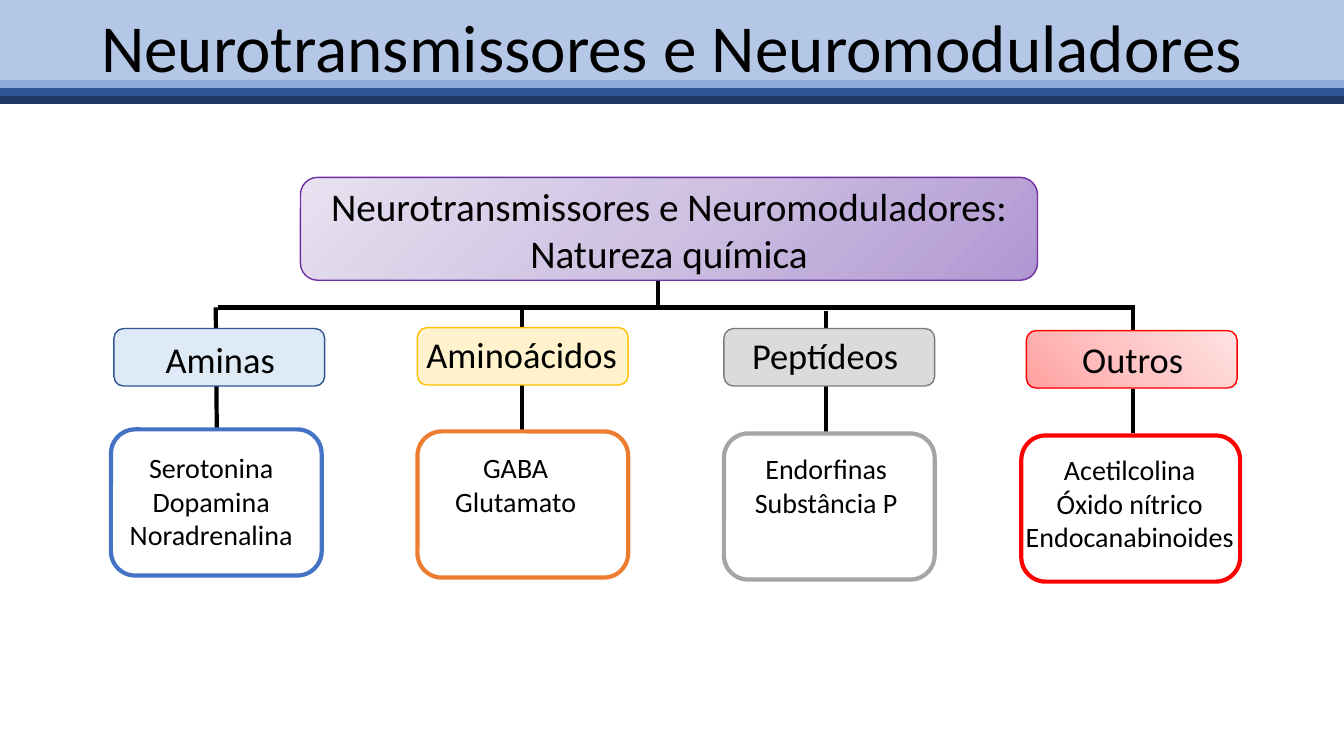
from pptx import Presentation
from pptx.dml.color import RGBColor
from pptx.enum.shapes import MSO_CONNECTOR, MSO_SHAPE
from pptx.enum.text import MSO_ANCHOR, MSO_AUTO_SIZE, PP_ALIGN
from pptx.oxml import parse_xml
from pptx.oxml.ns import nsdecls
from pptx.util import Pt
from lxml.etree import SubElement

PX = 9144
COLORS = {
    "black": "000000", "band": "B4C7E7", "light blue": "8FAADC",
    "mid blue": "2F5597", "navy": "203864", "purple": "7030A0", "red": "FF0000",
    "amine fill": "DEEBF7", "amine edge": "325491", "amine frame": "4472C4",
    "acid fill": "FFF2CC", "acid edge": "FFC000", "acid frame": "ED7D31",
    "peptide fill": "DBDBDB", "peptide edge": "7C7C7C", "peptide frame": "A5A5A5",
}
PURPLE_FADE = ("B197D2", "CEC1E2", "E7E1F0")
RED_FADE = ("FFA0A0", "FFC5C5", "FFE3E3")

deck = Presentation()
deck.slide_width, deck.slide_height = 1333 * PX, 750 * PX
slide = deck.slides.add_slide(deck.slide_layouts[5])
shapes = slide.shapes


def write(text, at, size, target=None):
    left, top, width, height = [n * PX for n in at]
    holder = target or shapes.add_textbox(left, top, width, height)
    holder.left, holder.top, holder.width, holder.height = left, top, width, height
    frame = holder.text_frame
    frame.word_wrap = True
    frame.auto_size = MSO_AUTO_SIZE.NONE
    frame.vertical_anchor = MSO_ANCHOR.TOP
    frame.text = text
    for paragraph in frame.paragraphs:
        paragraph.alignment = PP_ALIGN.CENTER
        paragraph.font.size = Pt(size)
        paragraph.font.name = "Calibri"
        paragraph.font.color.rgb = RGBColor.from_string(COLORS["black"])


def box(at, fill=None, edge=None, weight=1, fade=None, focus="", kind=MSO_SHAPE.ROUNDED_RECTANGLE):
    shape = shapes.add_shape(kind, *[n * PX for n in at])
    shape.shadow.inherit = False
    if fade:
        stops = "".join(
            f'<a:gs pos="{i * 50000}"><a:srgbClr val="{tint}"/></a:gs>' for i, tint in enumerate(fade))
        shape._element.spPr.insert(2, parse_xml(
            f'<a:gradFill {nsdecls("a")} rotWithShape="1"><a:gsLst>{stops}</a:gsLst>'
            f'<a:path path="circle"><a:fillToRect {focus}/></a:path></a:gradFill>'))
    elif fill:
        shape.fill.solid()
        shape.fill.fore_color.rgb = RGBColor.from_string(COLORS[fill])
    else:
        shape.fill.background()
    if edge:
        shape.line.color.rgb = RGBColor.from_string(COLORS[edge])
        shape.line.width = Pt(weight)
    else:
        shape.line.fill.background()


box((0, 0, 1333, 84), "band", kind=MSO_SHAPE.RECTANGLE)

rules = [
    (-2, 84, 1333, 84, "light blue", 6),
    (-2, 92, 1335, 92, "mid blue", 6),
    (-2, 99, 1335, 99, "navy", 6),
    (216, 305, 1126, 305, "black", 3),
    (518, 305, 518, 427, "black", 3),
    (214, 305, 215, 426, "black", 3),
    (1124, 308, 1124, 430, "black", 3),
    (819, 309, 819, 431, "black", 3),
    (653, 269, 653, 306, "black", 3),
]
for x1, y1, x2, y2, color, weight in rules:
    rule = shapes.add_connector(MSO_CONNECTOR.STRAIGHT, x1 * PX, y1 * PX, x2 * PX, y2 * PX)
    rule.line.color.rgb = RGBColor.from_string(COLORS[color])
    rule.line.width = Pt(weight)
    SubElement(rule._element.spPr, "{http://schemas.openxmlformats.org/drawingml/2006/main}effectLst")

write("Neurotransmissores e Neuromoduladores", (0, 0, 1333, 91), 48, target=shapes.title)
shapes._spTree.append(shapes.title._element)

box((298, 176, 731, 102), edge="purple", fade=PURPLE_FADE, focus='l="100000" t="100000"')
write("Neurotransmissores e Neuromoduladores:\nNatureza química", (298, 176, 731, 104), 28)

# name, label box, label text, members, member text, frame, fill, edge, frame colour
classes = [
    ("Aminas", (113, 326), (110, 330), "Serotonina\nDopamina\nNoradrenalina", (68, 442),
     (110, 426, 209), "amine fill", "amine edge", "amine frame"),
    ("Aminoácidos", (414, 325), (409, 325), "GABA\nGlutamato", (370, 442),
     (414, 428, 209), "acid fill", "acid edge", "acid frame"),
    ("Peptídeos", (718, 326), (710, 326), "Endorfinas\nSubstância P", (678, 443),
     (718, 430, 209), "peptide fill", "peptide edge", "peptide frame"),
    ("Outros", (1018, 328), (1015, 330), "Acetilcolina\nÓxido nítrico\nEndocanabinoides", (979, 444),
     (1013, 432, 217), None, "red", "red"),
]
for name, label, name_at, members, members_at, frame_at, fill, edge, frame_color in classes:
    box((*label, 209, 57), fill, edge, fade=None if fill else RED_FADE, focus='t="100000" r="100000"')
    write(name, (*name_at, 217, 54), 26)
    write(members, (*members_at, 283, 145), 20)
    box((*frame_at, 145), edge=frame_color, weight=3)

deck.save("out.pptx")
